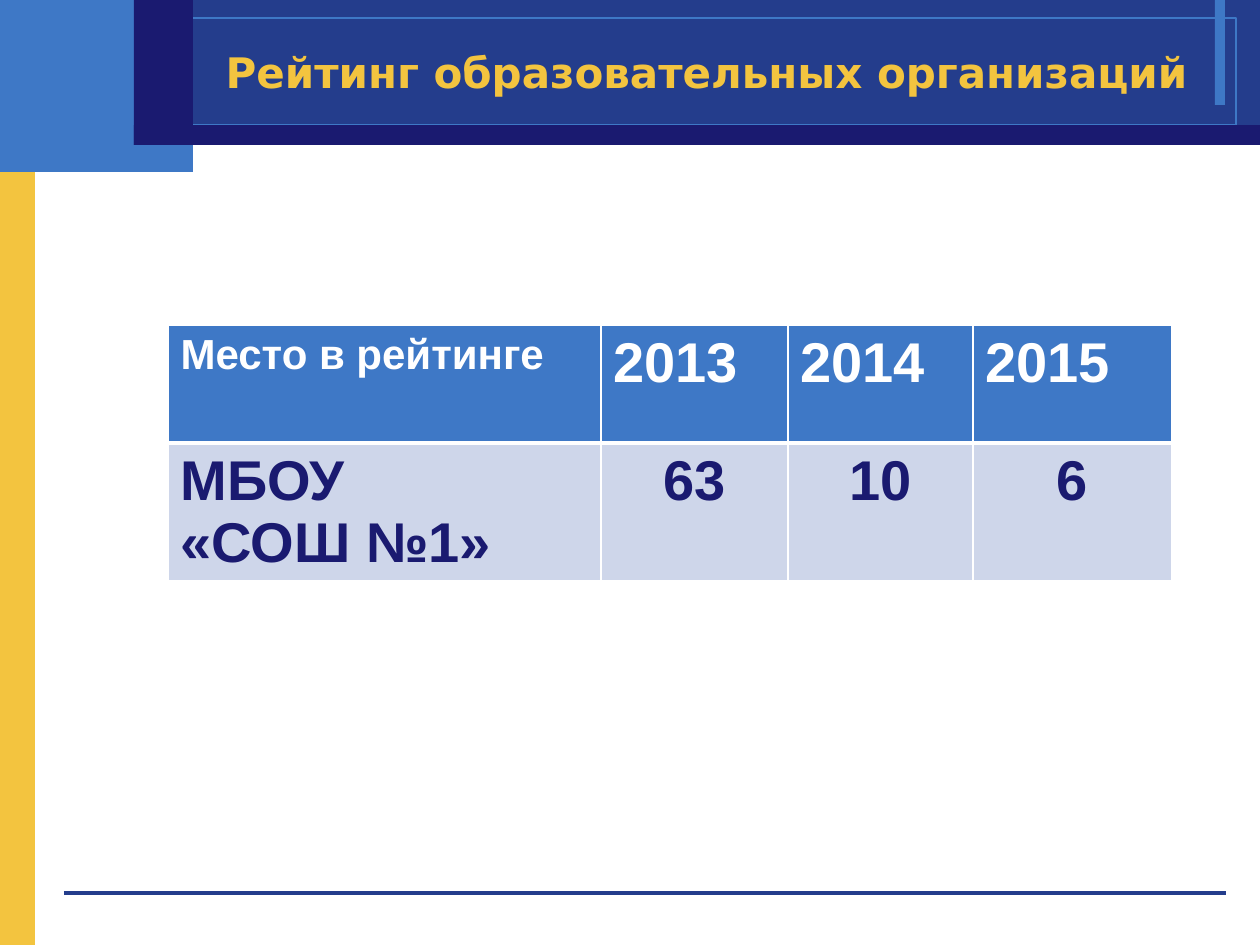
import lxml.etree
import pptx
import pptx.dml.color
import pptx.enum.shapes
import pptx.enum.text
import pptx.oxml
import pptx.oxml.ns
import pptx.util

PX = 914400 / 126
COLORS = {
    "yellow": "F3C43F",
    "light blue": "3E78C6",
    "blue": "243D8C",
    "navy": "1A1A70",
    "pale": "CED6EA",
    "white": "FFFFFF",
}


def emu(*lengths):
    return [pptx.util.Emu(round(length * PX)) for length in lengths]


def rgb(name):
    return pptx.dml.color.RGBColor.from_string(COLORS[name])


presentation = pptx.Presentation()
presentation.slide_width, presentation.slide_height = emu(1260, 945)
slide = presentation.slides.add_slide(presentation.slide_layouts[5])

# Background bars and frame, back to front: left, top, width, height, fill, line
bars = [
    (0, 134, 35, 811, "yellow", None),
    (0, 0, 193, 172, "light blue", None),
    (193, 0, 1067, 145, "blue", None),
    (1215, 0, 10, 105, "light blue", None),
    (25, 18, 1211, 107, None, "light blue"),
    (134, 125, 1126, 20, "navy", None),
    (134, 0, 59, 145, "navy", None),
]
for left, top, width, height, fill, line in bars:
    bar = slide.shapes.add_shape(
        pptx.enum.shapes.MSO_SHAPE.RECTANGLE, *emu(left, top, width, height))
    bar.shadow.inherit = False
    if fill:
        bar.fill.solid()
        bar.fill.fore_color.rgb = rgb(fill)
    else:
        bar.fill.background()
    if line:
        bar.line.color.rgb = rgb(line)
        bar.line.width = pptx.util.Pt(0)
    else:
        bar.line.fill.background()

footer_line = slide.shapes.add_connector(
    pptx.enum.shapes.MSO_CONNECTOR.STRAIGHT, *emu(64, 893, 1226, 893))
footer_line.line.color.rgb = rgb("blue")
footer_line.line.width = pptx.util.Pt(0)
lxml.etree.SubElement(
    footer_line._element.spPr, pptx.oxml.ns.qn("a:effectLst"))

# Title, brought in front of the bars
title = slide.shapes.title
slide.shapes._spTree.append(title._element)
title.left, title.top, title.width, title.height = emu(213, 33, 1012, 78)
frame = title.text_frame
frame.text = "Рейтинг образовательных организаций"
frame.word_wrap = True
frame.auto_size = pptx.enum.text.MSO_AUTO_SIZE.NONE
frame.vertical_anchor = pptx.enum.text.MSO_ANCHOR.MIDDLE
paragraph = frame.paragraphs[0]
paragraph.alignment = pptx.enum.text.PP_ALIGN.LEFT
paragraph.font.name = "DejaVu Sans"
paragraph.font.size = pptx.util.Pt(24)
paragraph.font.bold = True
paragraph.font.color.rgb = rgb("yellow")

# Ranking table
rows = [
    ["Место в рейтинге", "2013", "2014", "2015"],
    ["МБОУ\n«СОШ №1»", "63", "10", "6"],
]
column_widths = emu(433, 187, 185, 199)
row_heights = emu(118, 136)
table = slide.shapes.add_table(
    len(rows), len(column_widths), *emu(168, 325),
    sum(column_widths), sum(row_heights)).table
for column, width in zip(table.columns, column_widths):
    column.width = width
for row, height in zip(table.rows, row_heights):
    row.height = height

for row_index, texts in enumerate(rows):
    header = row_index == 0
    thick_side = "B" if header else "T"
    for column_index, text in enumerate(texts):
        cell = table.cell(row_index, column_index)
        for side in "LRTB":
            border_width = pptx.util.Pt(3 if side == thick_side else 1)
            cell._tc.get_or_add_tcPr().append(pptx.oxml.parse_xml(
                f'<a:ln{side} {pptx.oxml.ns.nsdecls("a")} w="{border_width}">'
                f'<a:solidFill><a:srgbClr val="{COLORS["white"]}"/>'
                f'</a:solidFill></a:ln{side}>'))
        cell.fill.solid()
        cell.fill.fore_color.rgb = rgb("light blue" if header else "pale")
        cell.text = text
        for paragraph in cell.text_frame.paragraphs:
            if not header and column_index > 0:
                paragraph.alignment = pptx.enum.text.PP_ALIGN.CENTER
            paragraph.font.name = "Arial"
            paragraph.font.size = pptx.util.Pt(
                24 if header and column_index == 0 else 32)
            paragraph.font.bold = True
            paragraph.font.color.rgb = rgb("white" if header else "navy")

presentation.save("out.pptx")
